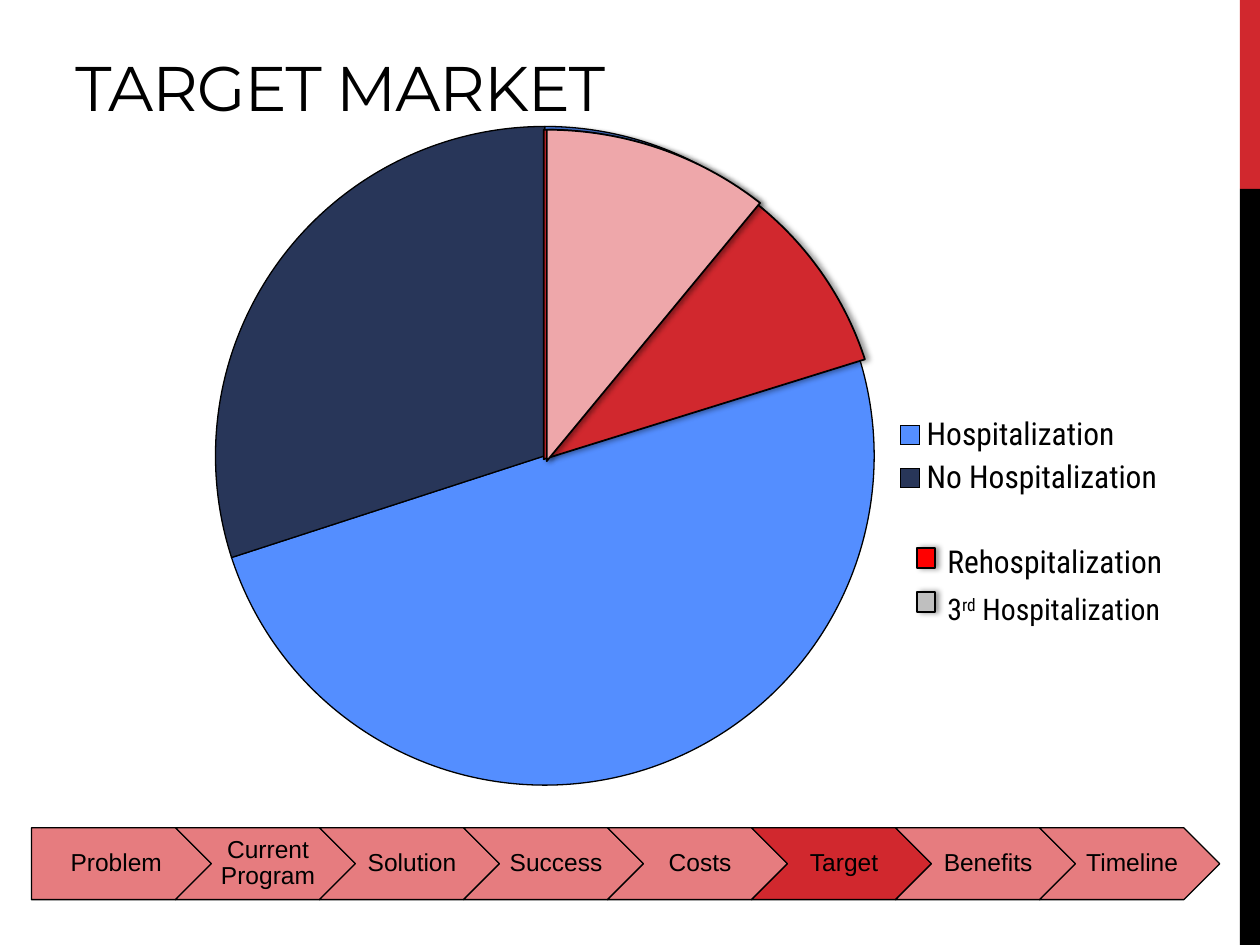
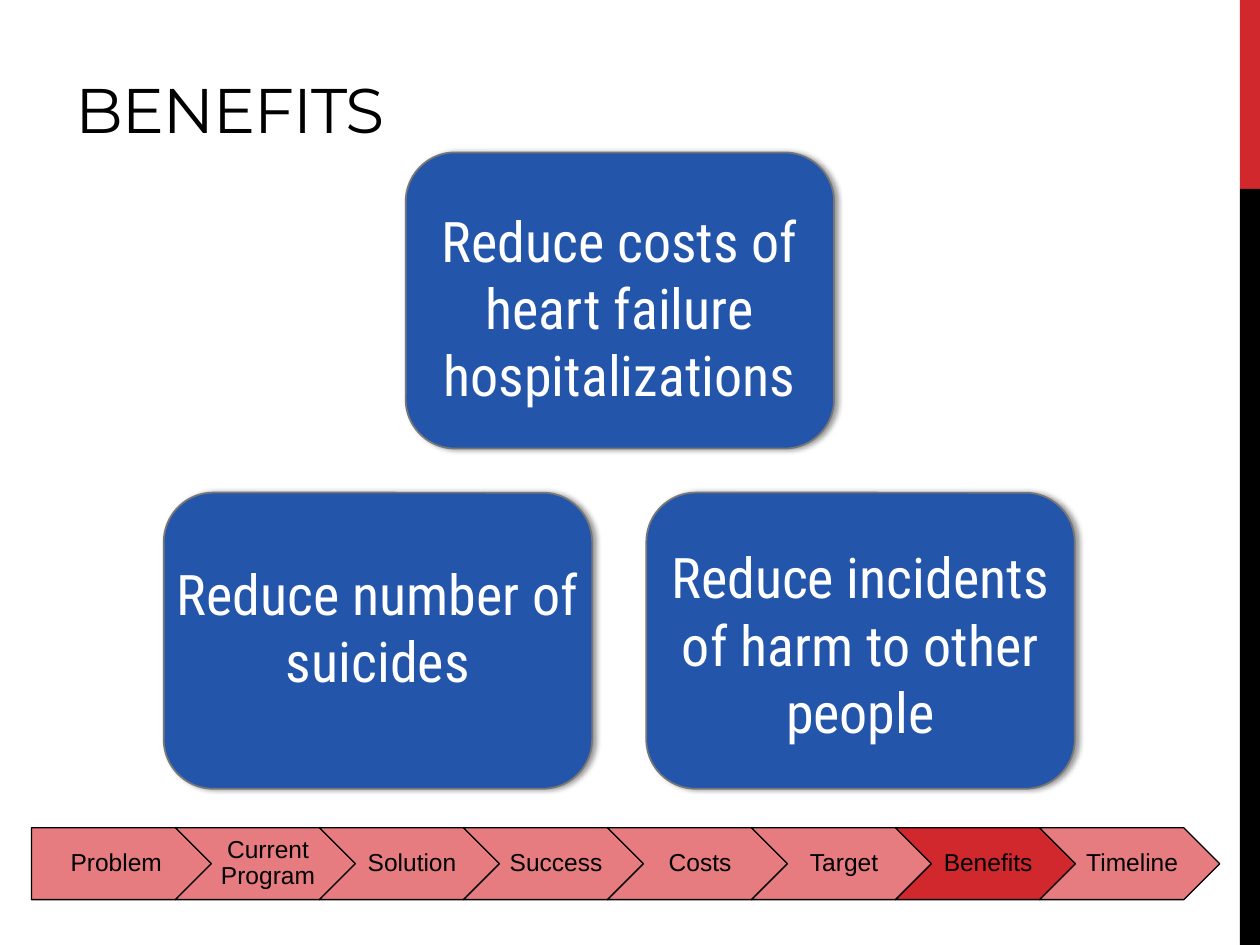
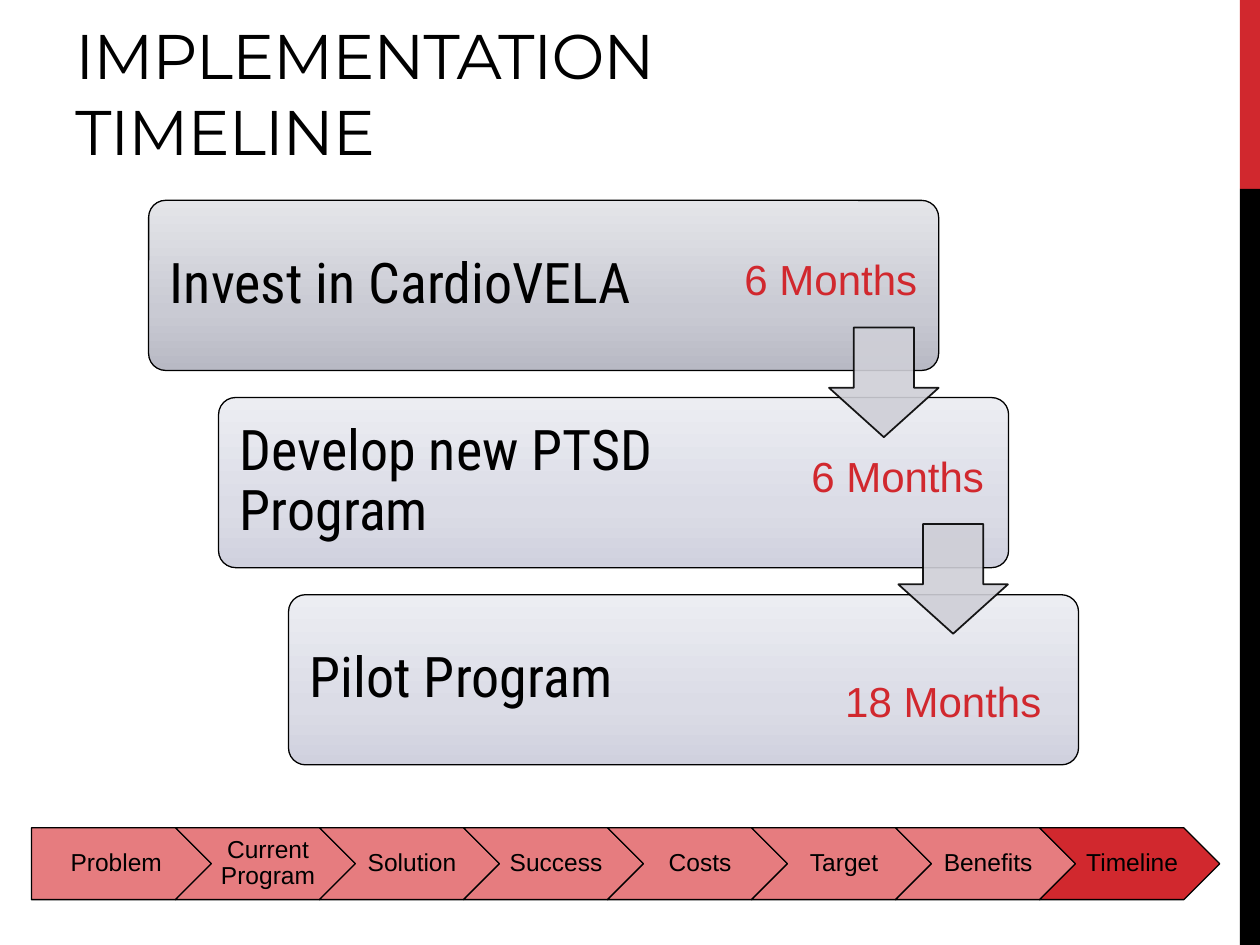
from copy import deepcopy

from pptx import Presentation
from pptx.chart.data import CategoryChartData
from pptx.dml.color import RGBColor
from pptx.enum.chart import XL_CHART_TYPE, XL_LEGEND_POSITION
from pptx.enum.shapes import MSO_SHAPE
from pptx.enum.text import MSO_ANCHOR, PP_ALIGN
from pptx.oxml import parse_xml
from pptx.oxml.ns import nsdecls, qn
from pptx.util import Inches, Pt

RECT, ROUND, PIE = MSO_SHAPE.RECTANGLE, MSO_SHAPE.ROUNDED_RECTANGLE, MSO_SHAPE.PIE
PLATE, CHEVRON, ARROW = MSO_SHAPE.PENTAGON, MSO_SHAPE.CHEVRON, MSO_SHAPE.DOWN_ARROW
LEFT, CENTER = PP_ALIGN.LEFT, PP_ALIGN.CENTER
TOP, MIDDLE, BOTTOM = MSO_ANCHOR.TOP, MSO_ANCHOR.MIDDLE, MSO_ANCHOR.BOTTOM

BLACK = RGBColor(0x00, 0x00, 0x00)
WHITE = RGBColor(0xFF, 0xFF, 0xFF)
RED = RGBColor(0xD1, 0x28, 0x2E)
ROSE = RGBColor(0xE6, 0x7C, 0x7F)
PINK = RGBColor(0xEE, 0xA7, 0xAA)
BRIGHT_RED = RGBColor(0xFF, 0x00, 0x00)
SILVER = RGBColor(0xBF, 0xBF, 0xBF)
GRAY = RGBColor(0x77, 0x77, 0x77)
SKY = RGBColor(0x54, 0x8E, 0xFF)
NAVY = RGBColor(0x28, 0x36, 0x59)
BLUE = RGBColor(0x23, 0x55, 0xAB)
ARROW_GRAY = RGBColor(0xCF, 0xCF, 0xD7)
DARK_STEP = [RGBColor(0xB8, 0xB9, 0xC4), RGBColor(0xC9, 0xCA, 0xD3), RGBColor(0xE4, 0xE5, 0xE9)]
LIGHT_STEP = [RGBColor(0xD0, 0xD1, 0xDE), RGBColor(0xDB, 0xDC, 0xE6), RGBColor(0xEC, 0xED, 0xF2)]

HEAD, BODY, PLAIN = "Montserrat", "Roboto Condensed", "Arial"
COLS, ROWS = 100, 75
STAGES = ["Problem", "Current Program", "Solution", "Success",
          "Costs", "Target", "Benefits", "Timeline"]


class Deck:
    """Holds the shared style and the current slide, on a grid of 100 by 75 cells."""

    def __init__(self):
        self.prs = Presentation()
        self.prs.slide_width, self.prs.slide_height = Inches(10), Inches(7.5)
        self.slide = None

    def cells(self, x, y, w, h):
        col, row = self.prs.slide_width / COLS, self.prs.slide_height / ROWS
        return [int(n) for n in (x * col, y * row, w * col, h * row)]

    def new_slide(self, title, top, height, stage):
        self.slide = self.prs.slides.add_slide(self.prs.slide_layouts[6])
        self.shape(RECT, (98.4, 0, 1.6, 15), RED)
        self.shape(RECT, (98.4, 15, 1.6, 60), BLACK)
        p = self.text((5, top, 63.3, height), title, 36, HEAD, anchor=BOTTOM)
        p.runs[0]._r.get_or_add_rPr().set("spc", "-60")
        self.stage_bar(stage)

    def stage_bar(self, current):
        for i, name in enumerate(STAGES):
            sp = self.shape(CHEVRON if i else PLATE, (2.5 + 11.43 * i, 65.7, 14.3, 5.7),
                            RED if name == current else ROSE, BLACK, 0.75)
            self.label(sp, name, 14, PLAIN, align=CENTER, anchor=MIDDLE, spacing=0.9,
                       insets=(0.06 if i else 0.08, 0.04, 0.02, 0.04))

    def shape(self, kind, at, fill, line=None, width=1, adj=(), shadow=False):
        sp = self.slide.shapes.add_shape(kind, *self.cells(*at))
        for i, value in enumerate(adj):
            sp.adjustments[i] = value
        if isinstance(fill, list):
            self.gradient(sp, fill)
        else:
            sp.fill.solid()
            sp.fill.fore_color.rgb = fill
        if line is None:
            sp.line.fill.background()
        else:
            sp.line.color.rgb = line
            sp.line.width = Pt(width)
        sp.shadow.inherit = False
        if shadow:
            sp._element.spPr.find(qn("a:effectLst")).append(parse_xml(
                f'<a:outerShdw {nsdecls("a")} blurRad="{Pt(3.1)}" dist="{Pt(1.8)}" dir="0">'
                '<a:srgbClr val="000000"><a:alpha val="40000"/></a:srgbClr></a:outerShdw>'))
        return sp

    def gradient(self, sp, colors):
        sp.fill.gradient()
        sp.fill.gradient_angle = 90
        stops = sp._element.spPr.find(".//" + qn("a:gsLst"))
        stops.append(deepcopy(stops[-1]))
        for stop, color, position in zip(sp.fill.gradient_stops, colors, (0, 0.35, 1)):
            stop.color.rgb = color
            stop.position = position

    def fade(self, sp, percent):
        for color in sp._element.spPr.iter(qn("a:srgbClr")):
            color.append(parse_xml(f'<a:alpha {nsdecls("a")} val="{percent * 1000}"/>'))

    def style(self, r, size, font, color):
        r.font.size, r.font.name, r.font.color.rgb = Pt(size), font, color

    def label(self, sp, text, size, font, color=BLACK, align=LEFT, anchor=TOP,
              spacing=None, insets=(0.1, 0.05, 0.1, 0.05)):
        tf = sp.text_frame
        tf.word_wrap, tf.vertical_anchor = True, anchor
        tf.margin_left, tf.margin_top, tf.margin_right, tf.margin_bottom = map(Inches, insets)
        tf.text = text
        p = tf.paragraphs[0]
        p.alignment, p.line_spacing = align, spacing
        self.style(p.runs[0], size, font, color)
        return p

    def text(self, at, text, size, font, color=BLACK, align=LEFT, anchor=TOP):
        sp = self.slide.shapes.add_textbox(*self.cells(*at))
        return self.label(sp, text, size, font, color, align, anchor)

    def pie_chart(self, at, values, colors):
        data = CategoryChartData()
        data.categories = list(values)
        data.add_series("Series 1", list(values.values()))
        chart = self.slide.shapes.add_chart(XL_CHART_TYPE.PIE, *self.cells(*at), data).chart
        chart.has_title = False
        chart.font.size, chart.font.name, chart.font.color.rgb = Pt(18), PLAIN, BLACK
        chart.has_legend = True
        chart.legend.position = XL_LEGEND_POSITION.RIGHT
        chart.legend.include_in_layout = False
        self.style(chart.legend, 18, BODY, BLACK)
        plot = chart.plots[0]
        plot.vary_by_categories = True
        for i, color in enumerate(colors):
            point = plot.series[0].points[i].format
            point.fill.solid()
            point.fill.fore_color.rgb = color
            point.line.color.rgb = BLACK
            point.line.width = Pt(0.75)
        layout = "".join(f'<c:{k} val="{v}"/>' for k, v in (
            ("layoutTarget", "inner"), ("xMode", "edge"), ("yMode", "edge"),
            ("x", 0.018), ("y", 0.115), ("w", 0.672), ("h", 0.768)))
        chart._chartSpace.chart.plotArea.insert(0, parse_xml(
            f'<c:layout {nsdecls("c")}><c:manualLayout>{layout}</c:manualLayout></c:layout>'))

    def wedge(self, at, start, color):
        sp = self.shape(PIE, at, color, BLACK, adj=(start, 162), shadow=True)
        sp._element.spPr.find(qn("a:xfrm")).set("flipH", "1")

    def swatch(self, y, color):
        self.shape(RECT, (72.8, y, 1.4, 1.6), color, BLACK, shadow=True)


def target_market(deck):
    deck.new_slide("TARGET MARKET", 1.4, 8.9, "Target")
    deck.pie_chart((15.7, 2.2, 77.8, 68.1),
                   {"Hospitalization": 70, "No Hospitalization": 30}, (SKY, NAVY))
    deck.wedge((16.4, 10.3, 53.5, 52.3), 118.36, RED)
    deck.wedge((16.4, 10.3, 54, 52.6), 138.26, PINK)
    deck.swatch(43.5, BRIGHT_RED)
    deck.text((74.2, 42.5, 21.1, 4), "Rehospitalization", 18, BODY)
    deck.swatch(47, SILVER)
    p = deck.text((74.2, 46.4, 24.4, 3.9), "3", 17, BODY)
    for part in ("rd", " Hospitalization"):
        r = p.add_run()
        r.text = part
        deck.style(r, 17, BODY, BLACK)
    p.runs[1]._r.get_or_add_rPr().set("baseline", "30000")


def benefits(deck):
    deck.new_slide("BENEFITS", 3.2, 8.9, "Benefits")
    cards = [(32.2, 12.1, 3.8, "Reduce costs of heart failure hospitalizations"),
             (13, 39.1, 4.8, "Reduce number of suicides"),
             (51.3, 39.1, 3.5, "Reduce incidents of harm to other people")]
    for x, y, drop, benefit in cards:
        deck.shape(ROUND, (x, y, 34, 23.5), BLUE, GRAY, shadow=True)
        deck.text((x, y + drop, 34, 17.2), benefit, 32, BODY, WHITE, CENTER)


def timeline(deck):
    deck.new_slide("IMPLEMENTATION TIMELINE", -1.2, 15, "Timeline")
    steps = [("Invest in CardioVELA", DARK_STEP), ("Develop new PTSD Program", LIGHT_STEP),
             ("Pilot Program", LIGHT_STEP)]
    for i, (step, colors) in enumerate(steps):
        sp = deck.shape(ROUND, (11.8 + 5.55 * i, 15.9 + 15.65 * i, 62.7, 13.5),
                        colors, BLACK, 0.75, adj=(0.1,))
        deck.label(sp, step, 32, BODY, anchor=MIDDLE, spacing=0.9,
                   insets=(0.13, 0.13, 1.55, 0.13))
    for i in range(len(steps) - 1):
        sp = deck.shape(ARROW, (65.8 + 5.5 * i, 26 + 15.6 * i, 8.7, 8.7),
                        ARROW_GRAY, BLACK, adj=(0.55, 0.45))
        deck.fade(sp, 90)
    for x, y, months in ((58.1, 19.6, 6), (63.4, 35.3, 6), (66.1, 53.1, 18)):
        deck.text((x, y, 19.2, 5), f"{months} Months", 24, PLAIN, RED)


def main():
    deck = Deck()
    for build in (target_market, benefits, timeline):
        build(deck)
    deck.prs.save("out.pptx")


if __name__ == "__main__":
    main()
